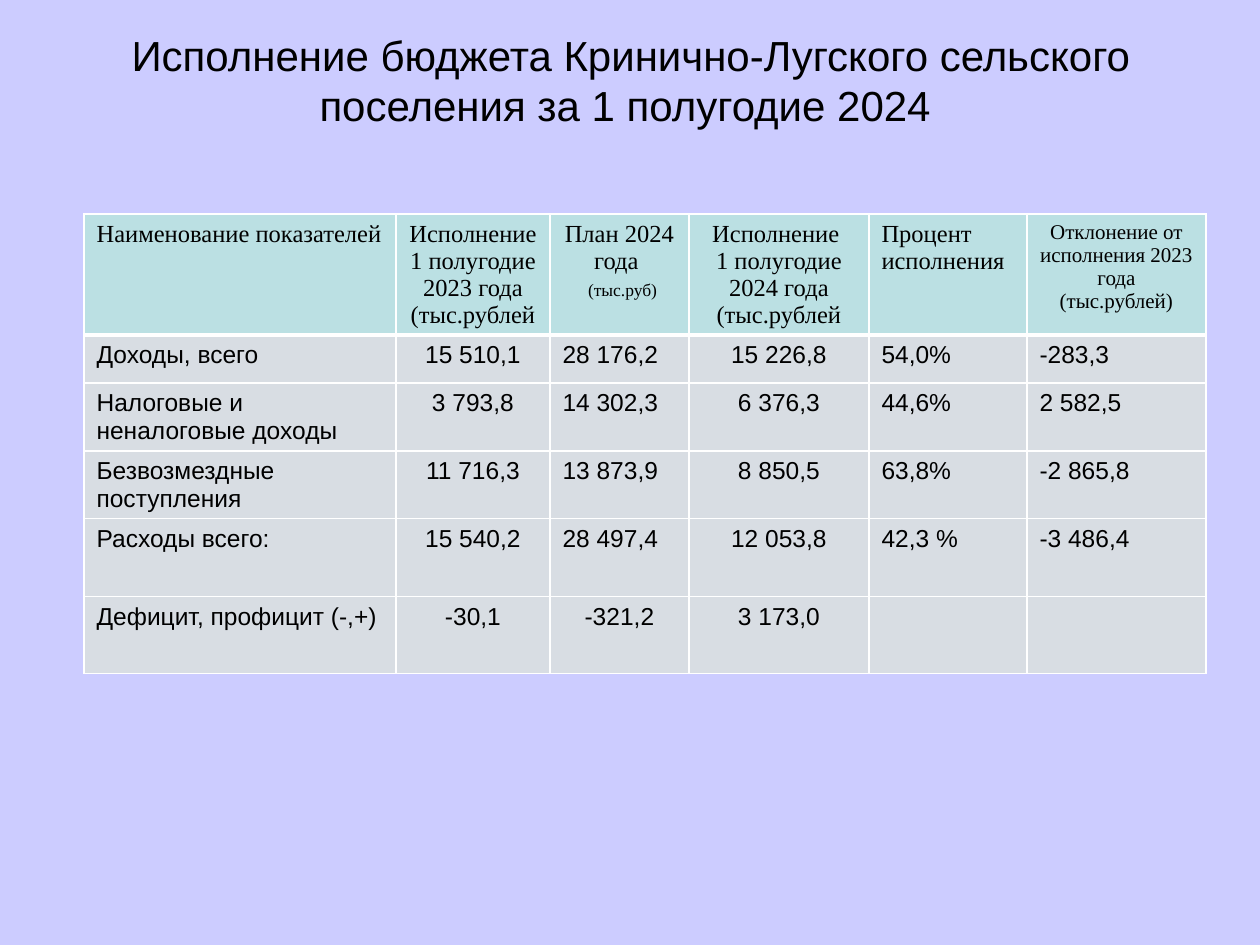
from dataclasses import dataclass

from lxml import etree
from pptx import Presentation
from pptx.dml.color import RGBColor
from pptx.enum.text import MSO_ANCHOR, MSO_AUTO_SIZE, PP_ALIGN
from pptx.oxml.ns import qn
from pptx.util import Emu, Pt

LEFT, CENTER = PP_ALIGN.LEFT, PP_ALIGN.CENTER
MIDDLE, NO_FIT = MSO_ANCHOR.MIDDLE, MSO_AUTO_SIZE.NONE
TITLE_ONLY = 5
PX_PER_INCH = 126


@dataclass(frozen=True)
class Theme:
    background: str = "CCCCFF"
    text: str = "000000"
    header_fill: str = "BBE0E3"
    body_fill: str = "D8DDE3"
    border: str = "FFFFFF"
    thin: int = 1
    thick: int = 3
    body_font: str = "Arial"
    header_font: str = "Times New Roman"
    title_size: int = 24
    normal: int = 14
    small: int = 12
    unit: int = 10


THEME = Theme()


@dataclass(frozen=True)
class Span:
    text: str
    size: int = THEME.normal


@dataclass(frozen=True)
class CellText:
    lines: tuple[tuple[Span, ...], ...]
    align: PP_ALIGN = LEFT


@dataclass(frozen=True)
class CellStyle:
    font: str
    fill: str
    top: int
    bottom: int


def px(n: int) -> Emu:
    return Emu(round(n * 914400 / PX_PER_INCH))


def plain(*lines: str, align: PP_ALIGN = LEFT, size: int = THEME.normal) -> CellText:
    return CellText(tuple((Span(line, size),) for line in lines), align)


def add_run(p, span: Span, font: str) -> None:
    r = p.add_run()
    r.text = span.text
    formats = {"name": font, "size": Pt(span.size), "bold": False}
    for name, value in formats.items():
        setattr(r.font, name, value)
    r.font.color.rgb = RGBColor.from_string(THEME.text)


def add_borders(cell, style: CellStyle) -> None:
    tc_pr = cell._tc.get_or_add_tcPr()
    widths = {"lnL": THEME.thin, "lnR": THEME.thin, "lnT": style.top, "lnB": style.bottom}
    for tag, width in widths.items():
        ln = etree.SubElement(tc_pr, qn(f"a:{tag}"), w=str(Pt(width)))
        fill = etree.SubElement(ln, qn("a:solidFill"))
        etree.SubElement(fill, qn("a:srgbClr"), val=THEME.border)


def fill_cell(cell, content: CellText, style: CellStyle) -> None:
    add_borders(cell, style)
    cell.fill.solid()
    cell.fill.fore_color.rgb = RGBColor.from_string(style.fill)
    tf = cell.text_frame
    for i, line in enumerate(content.lines):
        p = tf.paragraphs[0] if i == 0 else tf.add_paragraph()
        p.alignment = content.align
        for span in line:
            add_run(p, span, style.font)


# Table content
def execution(year: int) -> CellText:
    return plain("Исполнение ", f"1 полугодие {year} года", "(тыс.рублей", align=CENTER)


HEADER = (
    plain("Наименование показателей"),
    execution(2023),
    CellText(((Span("План 2024 года "),),
              (Span(" "), Span("(тыс.руб)", THEME.unit))), CENTER),
    execution(2024),
    plain("Процент исполнения"),
    plain("Отклонение от исполнения 2023 года (тыс.рублей)", align=CENTER, size=THEME.small),
)
BODY = (
    ("Доходы, всего", "15 510,1", "28 176,2", "15 226,8", "54,0%", "-283,3"),
    ("Налоговые и неналоговые доходы", "3 793,8", "14 302,3", "6 376,3", "44,6%", "2 582,5"),
    ("Безвозмездные поступления", "11 716,3", "13 873,9", "8 850,5", "63,8%", "-2 865,8"),
    ("Расходы всего:", "15 540,2", "28 497,4", "12 053,8", "42,3 %", "-3 486,4"),
    ("Дефицит, профицит (-,+)", "-30,1", "-321,2", "3 173,0", "", ""),
)
ALIGNS = (LEFT, CENTER, LEFT, CENTER, LEFT, LEFT)
DEFICIT_ALIGNS = (LEFT, CENTER, CENTER, CENTER, LEFT, LEFT)
COLUMNS = (312, 154, 139, 180, 158, 179)
ROWS = (121, 48, 68, 67, 78, 77)


def add_title(s, text: str) -> None:
    sp = s.shapes.title
    box = {"left": px(64), "top": px(35), "width": px(1134), "height": px(89)}
    for name, value in box.items():
        setattr(sp, name, value)
    tf = sp.text_frame
    for name, value in {"word_wrap": True, "auto_size": NO_FIT, "vertical_anchor": MIDDLE}.items():
        setattr(tf, name, value)
    p = tf.paragraphs[0]
    p.alignment = CENTER
    add_run(p, Span(text, THEME.title_size), THEME.body_font)


def add_budget_table(s) -> None:
    frame = s.shapes.add_table(len(ROWS), len(COLUMNS), px(84), px(214),
                               px(sum(COLUMNS)), px(sum(ROWS)))
    table = frame.table
    table.first_row = table.horz_banding = False
    for column, width in zip(table.columns, COLUMNS):
        column.width = px(width)
    for row, height in zip(table.rows, ROWS):
        row.height = px(height)

    # Header row
    header_style = CellStyle(THEME.header_font, THEME.header_fill, THEME.thin, THEME.thick)
    for c, content in enumerate(HEADER):
        fill_cell(table.cell(0, c), content, header_style)

    # Figures
    for r, values in enumerate(BODY, start=1):
        top = THEME.thick if r == 1 else THEME.thin
        style = CellStyle(THEME.body_font, THEME.body_fill, top, THEME.thin)
        aligns = DEFICIT_ALIGNS if r == len(BODY) else ALIGNS
        for c, (value, align) in enumerate(zip(values, aligns)):
            content = plain(value, align=align) if value else CellText(())
            fill_cell(table.cell(r, c), content, style)


def main() -> None:
    prs = Presentation()
    prs.slide_width, prs.slide_height = px(1260), px(945)
    s = prs.slides.add_slide(prs.slide_layouts[TITLE_ONLY])
    s.background.fill.solid()
    s.background.fill.fore_color.rgb = RGBColor.from_string(THEME.background)
    add_title(s, "Исполнение бюджета Кринично-Лугского сельского поселения за 1 полугодие 2024 ")
    add_budget_table(s)
    prs.save("out.pptx")


if __name__ == "__main__":
    main()
